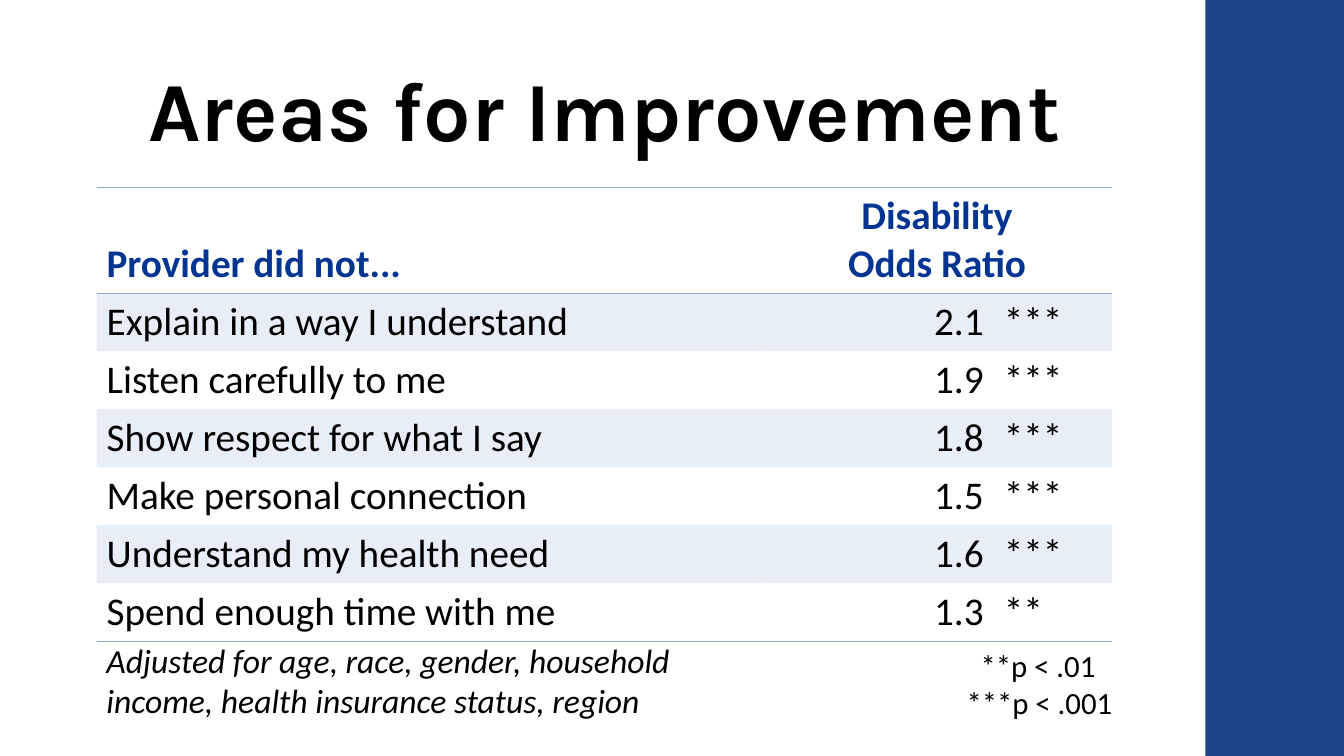
"""Build the slide "Areas for Improvement" with its table of odds ratios."""
from lxml.etree import SubElement
from pptx import Presentation
from pptx.dml.color import RGBColor
from pptx.enum.shapes import MSO_SHAPE as Shape
from pptx.enum.text import MSO_ANCHOR as Anchor, MSO_AUTO_SIZE as AutoSize, PP_ALIGN as Align
from pptx.oxml.ns import qn
from pptx.util import Pt

BLACK, NAVY, HEADING, PALE = "000000", "1B4388", "013591", "8EAADB"
NO_STYLE = "{2D5ABB26-0587-4C30-8999-92F81FD0307C}"


def color(value):
    """Turn a hex string into a colour."""
    return RGBColor.from_string(value)


def write(frame, lines, size, ink=BLACK, align=Align.LEFT, bold=False, italic=False, name="Calibri"):
    """Write one paragraph per line into a text frame."""
    for number, line in enumerate(lines):
        paragraph = frame.add_paragraph() if number else frame.paragraphs[0]
        paragraph.alignment = align
        run = paragraph.add_run()
        run.text = line
        run.font.name = name
        run.font.size = Pt(size)
        run.font.bold = bold
        run.font.italic = italic
        run.font.color.rgb = color(ink)


presentation = Presentation()
presentation.slide_width, presentation.slide_height = Pt(960), Pt(540)
slide = presentation.slides.add_slide(presentation.slide_layouts[5])

sidebar = slide.shapes.add_shape(Shape.RECTANGLE, Pt(861), Pt(0), Pt(99), Pt(540))
sidebar.shadow.inherit = False
sidebar.fill.solid()
sidebar.fill.fore_color.rgb = color(NAVY)
sidebar.line.fill.background()

title = slide.shapes.title
title.left, title.top, title.width, title.height = Pt(98.6), Pt(31), Pt(752.4), Pt(87)
title.text_frame.vertical_anchor = Anchor.BOTTOM
title.text_frame.auto_size = AutoSize.NONE
write(title.text_frame, ["Areas for Improvement"], 60, bold=True, name="Karla")
title.text_frame.paragraphs[0].line_spacing = 0.9

ratios = [
    ("Explain in a way I understand", "2.1", "***"),
    ("Listen carefully to me", "1.9", "***"),
    ("Show respect for what I say", "1.8", "***"),
    ("Make personal connection", "1.5", "***"),
    ("Understand my health need", "1.6", "***"),
    ("Spend enough time with me", "1.3", "**"),
]
column_widths = [475.2, 165.6, 84.6]
header_height, row_height = 75.6, 41.4
last_row = len(ratios)
table_shape = slide.shapes.add_table(
    last_row + 1, 3, Pt(69), Pt(133.7), Pt(sum(column_widths)),
    Pt(header_height + last_row * row_height))
table = table_shape.table
table.first_row = table.horz_banding = False
table_shape._element.find(".//" + qn("a:tableStyleId")).text = NO_STYLE
for column, width in zip(table.columns, column_widths):
    column.width = Pt(width)
for number, row in enumerate(table.rows):
    row.height = Pt(row_height if number else header_height)

table.cell(0, 1).merge(table.cell(0, 2))
table.cell(0, 0).vertical_anchor = Anchor.BOTTOM
write(table.cell(0, 0).text_frame, ["Provider did not..."], 28, HEADING, bold=True)
write(table.cell(0, 1).text_frame, ["Disability", "Odds Ratio"], 28, HEADING, Align.CENTER, bold=True)
for number, values in enumerate(ratios, 1):
    for column, (value, align) in enumerate(zip(values, (Align.LEFT, Align.RIGHT, Align.LEFT))):
        write(table.cell(number, column).text_frame, [value], 28, align=align)

borders = {0: ("a:lnT", "a:lnB"), last_row: ("a:lnB",)}
for number in range(last_row + 1):
    for column in range(3):
        cell = table.cell(number, column)
        properties = cell._tc.get_or_add_tcPr()
        for side in borders.get(number, ()):
            line = SubElement(properties, qn(side), w=str(Pt(1)))
            SubElement(SubElement(line, qn("a:solidFill")), qn("a:srgbClr"), val=PALE)
        if number % 2:
            cell.fill.solid()
            cell.fill.fore_color.rgb = color(PALE)
            tint = properties.find(".//" + qn("a:srgbClr"))
            SubElement(tint, qn("a:alpha"), val="20000")
        else:
            cell.fill.background()

notes = [
    (69, 453.6, 441.4, 65.4, ["Adjusted for age, race, gender, household income, health insurance status, region"], 24, True),
    (683.3, 458.6, 144.7, 60.6, ["**p < .01", "***p < .001"], 22, False),
]
for left, top, width, height, lines, size, italic in notes:
    note = slide.shapes.add_textbox(Pt(left), Pt(top), Pt(width), Pt(height))
    note.text_frame.word_wrap = True
    write(note.text_frame, lines, size, italic=italic)
note.text_frame.paragraphs[0]._p.get_or_add_pPr().set("marL", str(Pt(10)))

presentation.save("out.pptx")
